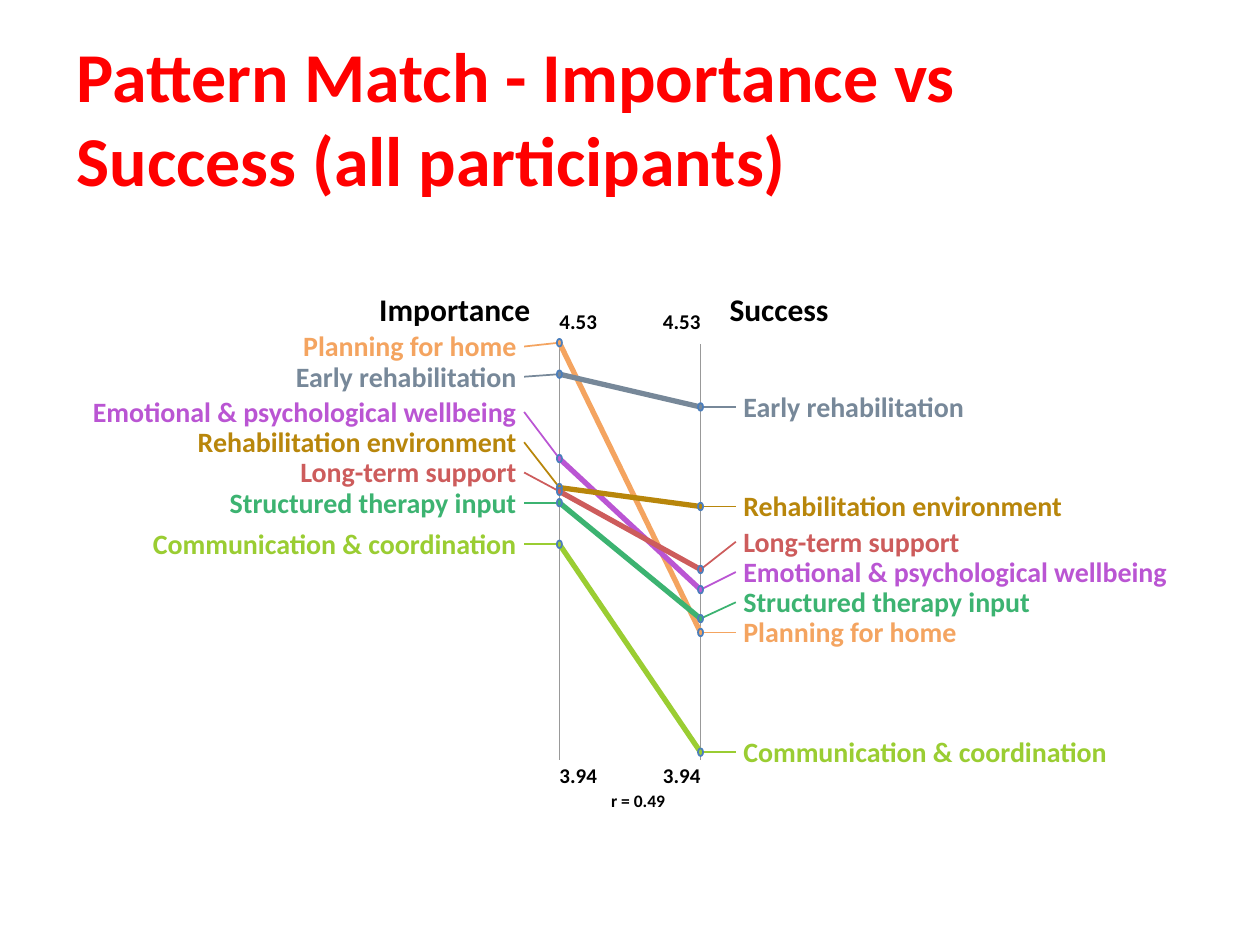
from typing import NamedTuple

from lxml.etree import SubElement
from pptx import Presentation
from pptx.dml.color import RGBColor
from pptx.enum.shapes import MSO_CONNECTOR, MSO_SHAPE
from pptx.enum.text import MSO_ANCHOR, PP_ALIGN
from pptx.oxml.ns import qn
from pptx.util import Emu, Pt

PX = 9144  # 100 px to the inch
LEFT, RIGHT = 444, 556  # the two axes
TOP, BASE = 273, 603
LEAD, GAP = 28, 34  # axis to lead end, axis to label
DOT_W, DOT_H = 4, 6


class Theme(NamedTuple):
    name: str
    color: str
    tag_l: int  # height of the left lead's outer end
    val_l: int  # height of the point on the left axis
    val_r: int
    tag_r: int


THEMES = [
    Theme("Planning for home", "F4A460", 275, 272, 502, 502),
    Theme("Early rehabilitation", "778899", 299, 297, 323, 323),
    Theme("Emotional & psychological wellbeing", "BA55D3", 327, 364, 468, 454),
    Theme("Rehabilitation environment", "B8860B", 351, 387, 402, 402),
    Theme("Long-term support", "CD5C5C", 375, 390, 452, 430),
    Theme("Structured therapy input", "3CB371", 399, 399, 491, 478),
    Theme("Communication & coordination", "9ACD32", 432, 432, 597, 597),
]


def px(n: int) -> Emu:
    return Emu(n * PX)


def rgb(code: str) -> RGBColor:
    return RGBColor.from_string(code)


def text(shapes, words: str, x: int, y: int, w: int = 350, h: int = 28, *,
         size: int = 16, color: str = "000000", right: bool = False,
         pad: int = 0, wrap: bool = False, anchor=MSO_ANCHOR.TOP) -> None:
    """Place text at x, which is the box's right edge when right is set."""
    box = shapes.add_textbox(px(x - w if right else x), px(y), px(w), px(h))
    frame = box.text_frame
    frame.word_wrap = wrap
    frame.vertical_anchor = anchor
    frame.margin_left = frame.margin_right = px(pad)
    frame.margin_top = frame.margin_bottom = px(pad // 2)
    par = frame.paragraphs[0]
    par.alignment = PP_ALIGN.RIGHT if right else PP_ALIGN.LEFT
    run = par.add_run()
    run.text = words
    font = run.font
    font.name, font.size, font.bold = "Calibri", Pt(size), True
    font.color.rgb = rgb(color)


def line(shapes, x1: int, y1: int, x2: int, y2: int, color: str,
         width: int = 1) -> None:
    link = shapes.add_connector(MSO_CONNECTOR.STRAIGHT,
                                px(x1), px(y1), px(x2), px(y2))
    link.line.color.rgb = rgb(color)
    link.line.width = Pt(width)
    SubElement(link._element.spPr, qn("a:effectLst"))


def dot(shapes, x: int, y: int, color: str) -> None:
    mark = shapes.add_shape(MSO_SHAPE.OVAL, px(x - DOT_W // 2),
                            px(y - DOT_H // 2), px(DOT_W), px(DOT_H))
    mark.shadow.inherit = False
    mark.fill.solid()
    mark.fill.fore_color.rgb = rgb(color)
    mark.line.color.rgb = rgb("4B7EBC")
    mark.line.width = Pt(1)


def draw(shapes, item: Theme) -> None:
    tint = item.color
    text(shapes, item.name, LEFT - GAP, item.tag_l - 14, color=tint, right=True)
    text(shapes, item.name, RIGHT + GAP, item.tag_r - 14, color=tint)
    line(shapes, LEFT - LEAD, item.tag_l, LEFT, item.val_l, tint)
    line(shapes, RIGHT, item.val_r, RIGHT + LEAD, item.tag_r, tint)
    line(shapes, LEFT, item.val_l, RIGHT, item.val_r, tint, 3)
    dot(shapes, LEFT, item.val_l, tint)
    dot(shapes, RIGHT, item.val_r, tint)


def main() -> None:
    deck = Presentation()
    deck.slide_width, deck.slide_height = px(1000), px(750)
    slide = deck.slides.add_slide(deck.slide_layouts[6])

    # Title
    text(slide.shapes, "Pattern Match - Importance vs Success (all participants)",
         51, 30, 843, 125, size=40, color="FF0000", pad=10, wrap=True,
         anchor=MSO_ANCHOR.MIDDLE)

    # Headings and axes
    plot = slide.shapes.add_group_shape().shapes
    text(plot, "Importance", LEFT - 23, 230, 150, 31, size=18, right=True)
    text(plot, "Success", RIGHT + 23, 230, 150, 31, size=18)
    for x in (LEFT, RIGHT):
        line(plot, x, BASE, x, TOP, "999999")

    # Themes
    for item in THEMES:
        draw(plot, item)

    # Scale ends and correlation
    for words, y in (("3.94", 605), ("4.53", 245)):
        text(plot, words, LEFT, y, 40, 21, size=12)
        text(plot, words, RIGHT, y, 40, 21, size=12, right=True)
    text(plot, "r = 0.49", 485, 627, 60, 17, size=10)

    deck.save("out.pptx")


if __name__ == "__main__":
    main()
